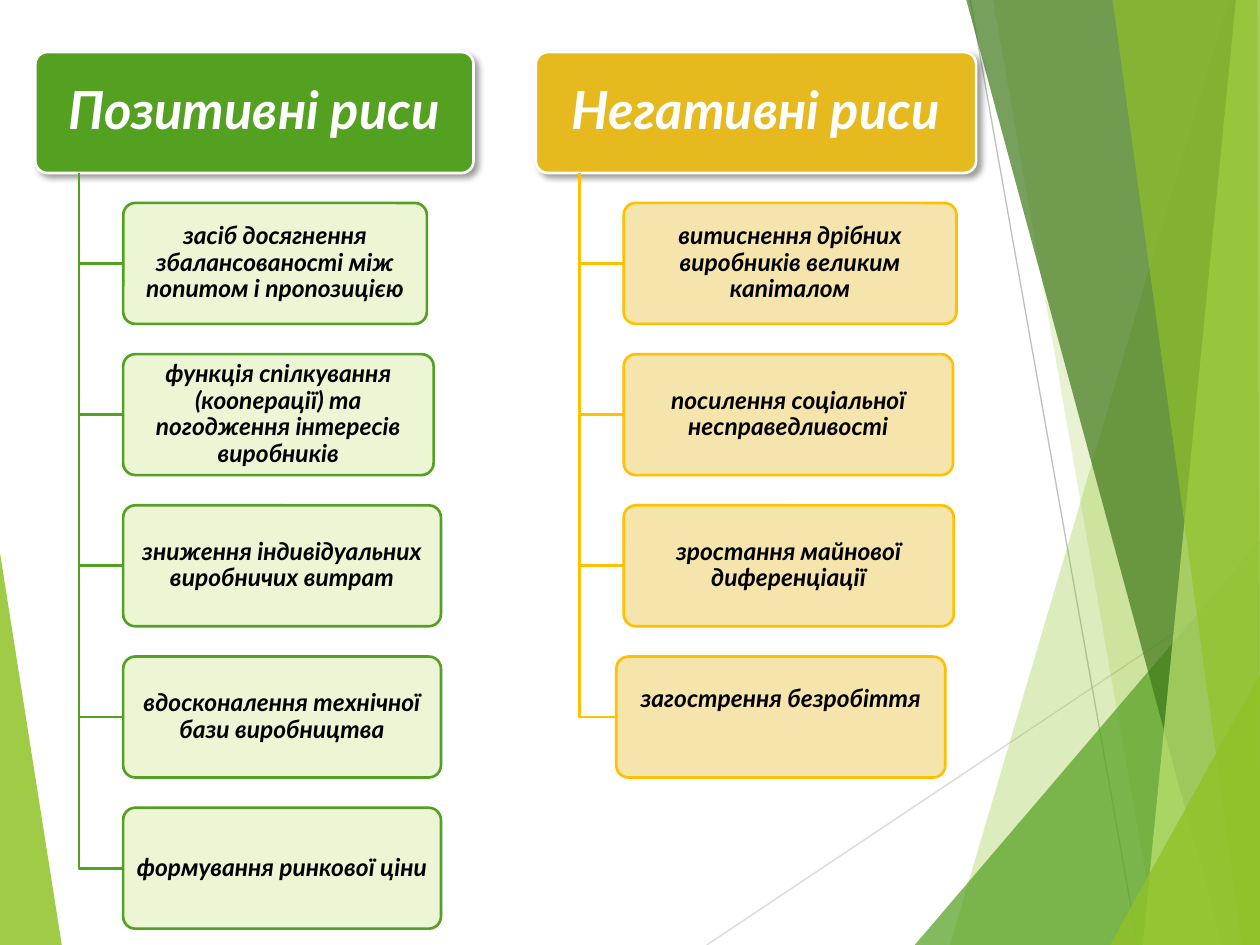
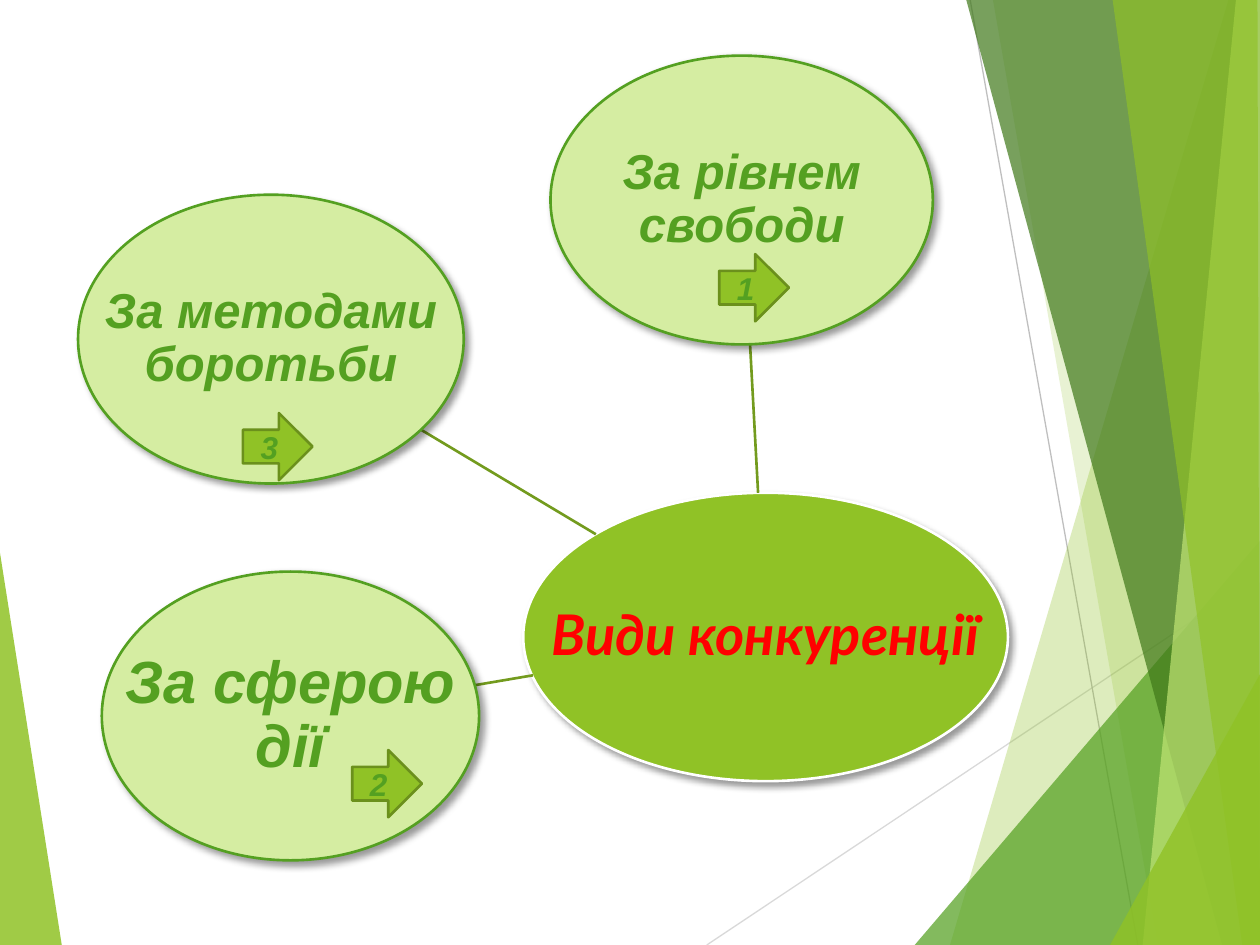
from lxml import etree
from pptx import Presentation
from pptx.dml.color import RGBColor
from pptx.enum.shapes import MSO_CONNECTOR, MSO_SHAPE
from pptx.enum.text import MSO_ANCHOR, PP_ALIGN
from pptx.oxml.ns import qn
from pptx.util import Pt

ROUNDED, OVAL, ARROW = MSO_SHAPE.ROUNDED_RECTANGLE, MSO_SHAPE.OVAL, MSO_SHAPE.RIGHT_ARROW
STRAIGHT = MSO_CONNECTOR.STRAIGHT
CENTER, MIDDLE = PP_ALIGN.CENTER, MSO_ANCHOR.MIDDLE

WHITE, BLACK = RGBColor(255, 255, 255), RGBColor(0, 0, 0)
LIME, GREEN = RGBColor(0x90, 0xC2, 0x26), RGBColor(0x54, 0xA0, 0x21)
FOREST, PALE_LIME = RGBColor(0x3F, 0x78, 0x19), RGBColor(0xC0, 0xE4, 0x74)
MINT, LEAF = RGBColor(0xEA, 0xF6, 0xD1), RGBColor(0xD5, 0xED, 0xA2)
GOLD, AMBER, CREAM = RGBColor(0xE6, 0xB9, 0x1E), RGBColor(0xFF, 0xC0, 0), RGBColor(0xF5, 0xE3, 0xA5)
OLIVE, DARK_OLIVE = RGBColor(0x73, 0x9B, 0x1E), RGBColor(0x6B, 0x90, 0x1C)
RED = RGBColor(255, 0, 0)
SILVER, GRAY = RGBColor(0xD9, 0xD9, 0xD9), RGBColor(0xBF, 0xBF, 0xBF)
HEAD_FONT, BODY_FONT = "Lato", "Arial"
WIDTH, HEIGHT = 720, 540

# Backdrop: facets as (corners, colour, opacity), rays as (from, to, colour)
LEFT_FACET = ([(0, 316), (35.3, HEIGHT), (0, HEIGHT)], LIME, 85)
RAYS = [((403.9, HEIGHT), (WIDTH, 329), SILVER), ((554.4, 0), (650.2, HEIGHT), GRAY)]
RIGHT_EDGE = [(WIDTH, HEIGHT), (WIDTH, 0)]
RIGHT_FACETS = [
    ([(702, 0), (542.9, HEIGHT)] + RIGHT_EDGE, LIME, 30),
    ([(567.4, 0), (661.7, HEIGHT)] + RIGHT_EDGE, LIME, 20),
    ([(522.7, HEIGHT), (WIDTH, 309), (WIDTH, HEIGHT)], GREEN, 72),
    ([(552.2, 0), (698.4, HEIGHT)] + RIGHT_EDGE, FOREST, 70),
    ([(706.3, 0), (653, HEIGHT)] + RIGHT_EDGE, PALE_LIME, 70),
    ([(635.8, 0), (709.9, HEIGHT), (WIDTH, HEIGHT), (718.6, 0)], LIME, 65),
    ([(634.3, HEIGHT), (WIDTH, 385.2), (WIDTH, HEIGHT)], LIME, 80),
]

# Slide 1: traits as (text, indent from the header, width, bottom inset)
TRAIT_COLUMNS = [
    dict(header="Позитивні риси", left=20.2, width=250.4, color=GREEN, line=GREEN, tint=MINT,
         traits=[("засіб досягнення збалансованості між попитом і пропозицією", 50.2, 173.5, 2),
                 ("функція спілкування (кооперації) та погодження інтересів виробників", 50.2, 177.4, 2),
                 ("зниження індивідуальних виробничих витрат", 50.2, 181.6, 2),
                 ("вдосконалення технічної бази виробництва", 50.2, 181.6, 2),
                 ("формування ринкової ціни", 50.2, 181.6, 2)]),
    dict(header="Негативні риси", left=306.2, width=251.6, color=GOLD, line=AMBER, tint=CREAM,
         traits=[("витиснення дрібних виробників великим капіталом", 50.2, 190.2, 2),
                 ("посилення соціальної несправедливості", 50.2, 188.2, 2),
                 ("зростання майнової диференціації", 50.2, 188.6, 2),
                 ("загострення безробіття", 46, 188, 22)]),
]
HEADER_TOP, BOX_HEIGHT, FIRST_TRAIT_TOP, ROW_PITCH, STEM_INDENT = 29.8, 69.1, 116, 86.4, 25

# Slide 2: the hub, and kinds with oval, spoke (hub end, kind end) and arrow place
HUB = dict(text="Види конкуренції", box=(299, 281.6, 277, 164.8))
KINDS = [
    dict(text="За рівнем свободи", size=28, box=(314.6, 31.8, 218.5, 165),
         spoke=((433.2, 281.6), (428.6, 196.8)), number="1", arrow=(411, 145.2)),
    dict(text="За сферою дії", size=34, box=(58.2, 326.6, 215.6, 165),
         spoke=((304.6, 385.9), (271.6, 391.5)), number="2", arrow=(201.3, 428.6)),
    dict(text="За методами боротьби", size=28, box=(44.6, 111.3, 220.4, 165),
         spoke=((340.5, 305.3), (240.8, 245.7)), number="3", arrow=(138.8, 236)),
]
ARROW_SIZE = (39.8, 38.4)


def points(values):
    return [Pt(value) for value in values]


def paint(shape, fill=None, opacity=100, line=None, shadow=False):
    shape.shadow.inherit = False
    if fill is None:
        shape.fill.background()
    else:
        shape.fill.solid()
        shape.fill.fore_color.rgb = fill
    properties = shape._element.spPr
    if opacity < 100:
        color = properties.find(qn("a:solidFill")).find(qn("a:srgbClr"))
        etree.SubElement(color, qn("a:alpha"), val=str(opacity * 1000))
    if line is None:
        shape.line.fill.background()
    else:
        shape.line.color.rgb = line
        shape.line.width = Pt(1.5)
    if shadow:
        outer = etree.SubElement(properties.find(qn("a:effectLst")), qn("a:outerShdw"),
                                 blurRad=str(Pt(4)), dist=str(Pt(3)), dir="2700000",
                                 algn="ctr", rotWithShape="0")
        color = etree.SubElement(outer, qn("a:srgbClr"), val="000000")
        etree.SubElement(color, qn("a:alpha"), val="40000")


def write_text(shape, text, size=14, font=HEAD_FONT, color=BLACK, spacing=0.9,
               insets=(2, 2, 2, 2)):
    frame = shape.text_frame
    frame.word_wrap = True
    frame.vertical_anchor = MIDDLE
    (frame.margin_left, frame.margin_top,
     frame.margin_right, frame.margin_bottom) = points(insets)
    paragraph = frame.paragraphs[0]
    paragraph.alignment = CENTER
    paragraph.line_spacing = spacing
    run = paragraph.add_run()
    run.text = text
    run.font.size, run.font.name = Pt(size), font
    run.font.bold = run.font.italic = True
    run.font.color.rgb = color


def add_outline(slide, corners, close):
    corners = [tuple(points(corner)) for corner in corners]
    builder = slide.shapes.build_freeform(*corners[0])
    builder.add_line_segments(corners[1:], close=close)
    return builder.convert_to_shape()


def add_line(slide, start, end, color, width):
    line = slide.shapes.add_connector(STRAIGHT, *points(start + end))
    line.line.color.rgb = color
    line.line.width = Pt(width)
    etree.SubElement(line._element.spPr, qn("a:effectLst"))


def add_facet(slide, corners, color, opacity):
    paint(add_outline(slide, corners, True), color, opacity)


def add_rounded(slide, box, **look):
    shape = slide.shapes.add_shape(ROUNDED, *points(box))
    shape.adjustments[0] = 0.1
    paint(shape, **look)
    return shape


def add_oval(slide, box, text, fill, line, **text_format):
    # The label spans the whole oval, wider than the oval's own text area
    paint(slide.shapes.add_shape(OVAL, *points(box)), fill, line=line, shadow=True)
    write_text(slide.shapes.add_textbox(*points(box)), text, **text_format)


def new_slide(deck):
    slide = deck.slides.add_slide(deck.slide_layouts[6])
    add_facet(slide, *LEFT_FACET)
    for start, end, color in RAYS:
        add_line(slide, start, end, color, 0.75)
    for facet in RIGHT_FACETS:
        add_facet(slide, *facet)
    return slide


def build_traits(deck):
    slide = new_slide(deck)
    for column in TRAIT_COLUMNS:
        left = column["left"]
        header = add_rounded(slide, (left, HEADER_TOP, column["width"], BOX_HEIGHT),
                             fill=column["color"], line=WHITE, shadow=True)
        write_text(header, column["header"], size=30, color=WHITE, insets=(4, 3, 4, 3))
        stem = left + STEM_INDENT
        for row, (text, indent, width, bottom) in enumerate(column["traits"]):
            top = FIRST_TRAIT_TOP + row * ROW_PITCH
            middle = top + BOX_HEIGHT / 2
            branch = [(stem, HEADER_TOP + BOX_HEIGHT), (stem, middle), (left + indent, middle)]
            paint(add_outline(slide, branch, False), line=column["line"])
            trait = add_rounded(slide, (left + indent, top, width, BOX_HEIGHT),
                                fill=column["tint"], opacity=90, line=column["line"])
            write_text(trait, text, insets=(2, 2, 2, bottom))


def build_kinds(deck):
    slide = new_slide(deck)
    add_oval(slide, HUB["box"], HUB["text"], LIME, WHITE, size=32, color=RED)
    for kind in KINDS:
        add_line(slide, *kind["spoke"], OLIVE, 1.5)
        add_oval(slide, kind["box"], kind["text"], LEAF, GREEN,
                 size=kind["size"], font=BODY_FONT, color=GREEN)
    for kind in KINDS:
        arrow = slide.shapes.add_shape(ARROW, *points(kind["arrow"] + ARROW_SIZE))
        paint(arrow, LIME, line=DARK_OLIVE)
        write_text(arrow, kind["number"], size=18, font=BODY_FONT, color=GREEN,
                   spacing=1.0, insets=(7.2, 3.6, 7.2, 3.6))


def main():
    deck = Presentation()
    deck.slide_width, deck.slide_height = Pt(WIDTH), Pt(HEIGHT)
    build_traits(deck)
    build_kinds(deck)
    deck.save("out.pptx")


if __name__ == "__main__":
    main()
